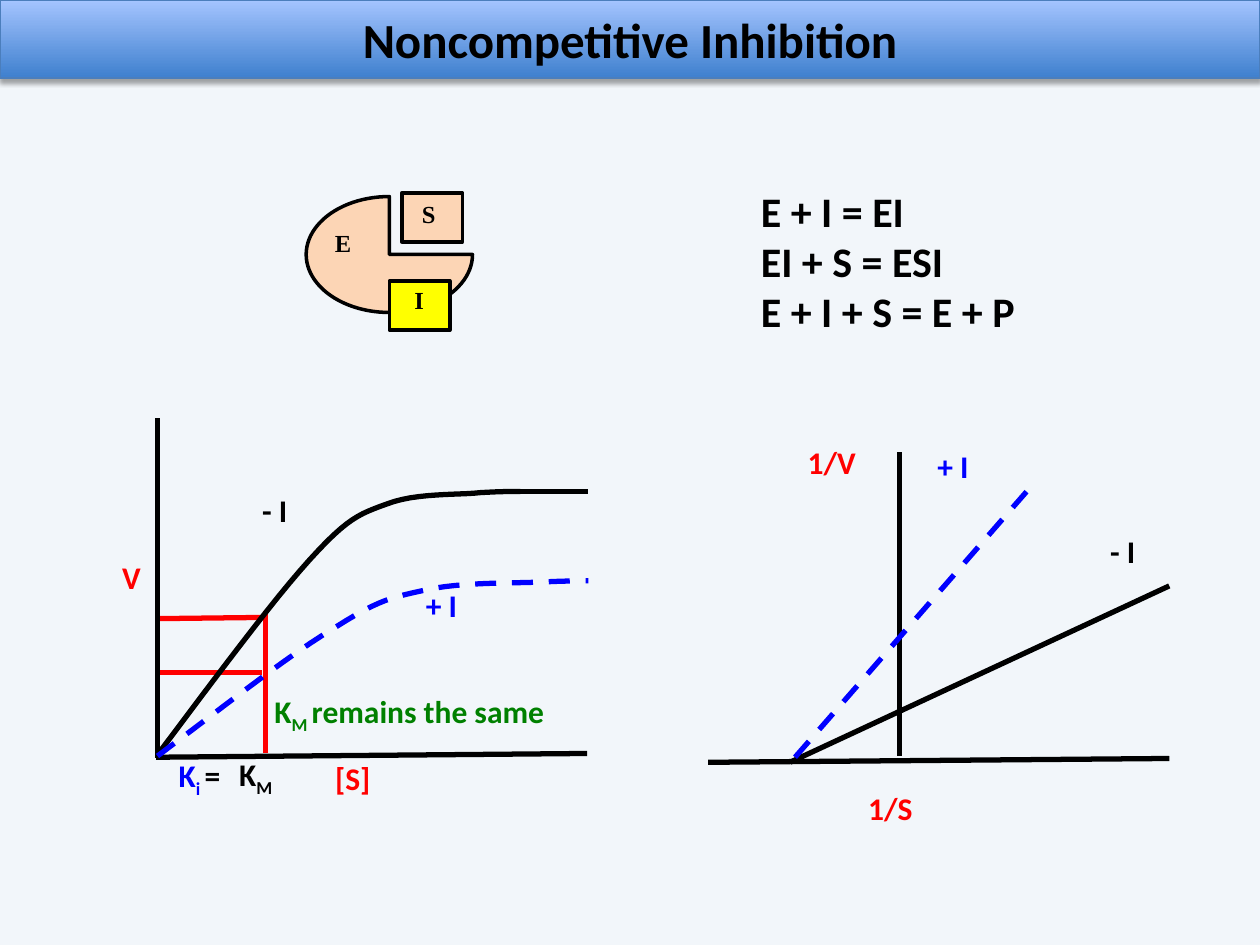
import lxml.etree
import pptx
import pptx.dml.color
import pptx.enum.dml
import pptx.enum.shapes
import pptx.enum.text
import pptx.oxml.ns
import pptx.util

WIDTH, HEIGHT = 10, 7.5
COLUMNS, ROWS = 100, 75
COLORS = {
    "background": "F2F6FA", "black": "000000", "red": "FF0000", "blue": "0000FF",
    "green": "008000", "peach": "FCD5B5", "yellow": "FFFF00",
    "title top": "A4C4FF", "title bottom": "3F80CE", "title border": "4B7EBC",
}
SHAPES = pptx.enum.shapes.MSO_SHAPE
LABEL = {"size": pptx.util.Pt(18), "name": "Calibri", "bold": True}
EQUATION = {**LABEL, "size": pptx.util.Pt(24)}
TITLE = {**LABEL, "size": pptx.util.Pt(28)}
ENZYME = {**LABEL, "size": pptx.util.Pt(14), "name": "Times New Roman"}

LINES = [
    ((56.2, 60.5), (92.8, 60.2), "black", False),
    ((71.4, 35.9), (71.4, 60), "black", False),
    ((62.7, 60.5), (92.8, 46.5), "black", False),
    ((63.1, 60.1), (82.1, 38.3), "blue", True),
    ((21.1, 48.5), (21.1, 59.8), "red", False),
    ((12.4, 49.1), (21.1, 49), "red", False),
    ((12.5, 53.4), (20.8, 53.4), "red", False),
    ((12.5, 33.2), (12.5, 60.2), "black", False),
    ((12.4, 60.1), (46.6, 59.8), "black", False),
    ((39.5, 39), (46.7, 39), "black", False),
]
CURVES = [
    ("black", False, (12.5, 59.9), [
        ((17.1, 53.8), (21.6, 47.7), (24.6, 44.4)),
        ((27.6, 41.1), (28.5, 40.8), (30.7, 40)),
        ((33, 39.1), (36.4, 39.3), (38.1, 39.1)),
        ((39.9, 39), (40.6, 39), (41.3, 39))]),
    ("blue", True, (12.5, 60), [
        ((18, 55.9), (22.9, 52), (26.6, 49.8)),
        ((30.2, 47.5), (31.2, 47.4), (33.9, 46.8)),
        ((36.6, 46.2), (40.7, 46.3), (42.9, 46.2)),
        ((45, 46.1), (45.9, 46.1), (46.7, 46.1))]),
]
ENZYME_PARTS = [
    (SHAPES.PIE, (24.3, 15.6, 13.2, 9.2), "peach"),
    (SHAPES.RECTANGLE, (30.9, 22.3, 4.8, 3.9), "yellow"),
    (SHAPES.RECTANGLE, (31.9, 15.3, 4.8, 3.9), "peach"),
]
LABELS = [
    ((59.4, 14.2, 23, 13.1), EQUATION, None, True, [
        [("E + I = EI", "black", False)],
        [("EI + S = ESI", "black", False)],
        [("E + I + S = E + P", "black", False)]]),
    ((63.7, 34.8, 6.2, 5.4), LABEL, 0.04, False, [[("1/V", "red", False)]]),
    ((68.5, 62.2, 5.7, 5.4), LABEL, 0.04, False, [[("1/S", "red", False)]]),
    ((74, 35.1, 4.4, 5.5), LABEL, 0.04, False, [[("+ I", "blue", False)]]),
    ((87.7, 41.8, 3.8, 5.5), LABEL, 0.04, False, [[("- I", "black", False)]]),
    ((31.9, 22.1, 4, 5.3), ENZYME, None, False, [[("I", "black", False)]]),
    ((32.5, 15.3, 4.4, 5.3), ENZYME, None, False, [[("S", "black", False)]]),
    ((25.6, 17.6, 4.9, 5.3), ENZYME, None, False, [[("E", "black", False)]]),
    ((9.3, 43.9, 2.9, 5), LABEL, 0.04, False, [[("V", "red", False)]]),
    ((20.4, 38.6, 3.6, 5), LABEL, 0.04, False, [[("- I", "black", False)]]),
    ((33.4, 46.1, 4.2, 5), LABEL, 0.04, False, [[("+ I", "blue", False)]]),
    ((26.6, 60.2, 3.5, 3.9), LABEL, 0, False, [[("[S]", "red", False)]]),
    ((18, 59.4, 6, 5.2), LABEL, None, False,
     [[("K", "black", False), ("M", "black", True)]]),
    ((13.2, 59.5, 6.9, 5.2), LABEL, None, False,
     [[("K", "blue", False), ("i ", "blue", True), ("=", "black", False)]]),
    ((20.8, 54.4, 29.3, 5.2), LABEL, None, False,
     [[("K", "green", False), ("M ", "green", True), ("remains the same", "green", False)]]),
]


def color(name):
    return pptx.dml.color.RGBColor.from_string(COLORS[name])


def place(*lengths):
    units = (WIDTH / COLUMNS, HEIGHT / ROWS) * 2
    return [pptx.util.Inches(length * unit) for length, unit in zip(lengths, units)]


def apply(target, values):
    for name, value in values.items():
        setattr(target, name, value)


def style_line(line, name, points, dashed=False):
    line.color.rgb = color(name)
    line.width = pptx.util.Pt(points)
    if dashed:
        line.dash_style = pptx.enum.dml.MSO_LINE.DASH


def add_effects(shape):
    tag = pptx.oxml.ns.qn("a:effectLst")
    return lxml.etree.SubElement(shape._element.spPr, tag)


def add_line(slide, start, end, name, dashed):
    connector = slide.shapes.add_connector(
        pptx.enum.shapes.MSO_CONNECTOR.STRAIGHT, *place(*start, *end))
    style_line(connector.line, name, 3, dashed)
    add_effects(connector)


def bezier(points, share):
    rest = 1 - share
    weights = (rest ** 3, 3 * rest ** 2 * share, 3 * rest * share ** 2, share ** 3)
    return place(*(sum(w * p[axis] for w, p in zip(weights, points)) for axis in (0, 1)))


def add_curve(slide, name, dashed, start, segments, steps=12):
    builder = slide.shapes.build_freeform(*place(*start))
    for segment in segments:
        points = (start, *segment)
        builder.add_line_segments(
            [bezier(points, step / steps) for step in range(1, steps + 1)], close=False)
        start = segment[-1]
    shape = builder.convert_to_shape()
    shape.shadow.inherit = False
    shape.fill.background()
    style_line(shape.line, name, 3, dashed)


def add_part(slide, kind, box, fill):
    shape = slide.shapes.add_shape(kind, *place(*box))
    shape.shadow.inherit = False
    shape.fill.solid()
    shape.fill.fore_color.rgb = color(fill)
    style_line(shape.line, "black", 2)


def write(paragraph, runs, font):
    for text, name, subscript in runs:
        run = paragraph.add_run()
        run.text = text
        apply(run.font, font)
        run.font.color.rgb = color(name)
        if subscript:
            run.font._element.set("baseline", "-25000")


def add_label(slide, box, font, inset, wrap, paragraphs):
    frame = slide.shapes.add_textbox(*place(*box)).text_frame
    apply(frame, {"word_wrap": wrap,
                  "auto_size": pptx.enum.text.MSO_AUTO_SIZE.SHAPE_TO_FIT_TEXT})
    if inset is not None:
        apply(frame, {f"margin_{side}": pptx.util.Inches(inset)
                      for side in ("left", "top", "right", "bottom")})
    for index, runs in enumerate(paragraphs):
        paragraph = frame.add_paragraph() if index else frame.paragraphs[0]
        write(paragraph, runs, font)


def add_title(slide, text):
    shape = slide.shapes.add_shape(SHAPES.RECTANGLE, *place(0, 0, COLUMNS, 6.2))
    shape.fill.gradient()
    shape.fill.gradient_angle = 90
    for stop, name, position in zip(
            shape.fill.gradient_stops, ("title bottom", "title top"), (0, 1)):
        stop.color.rgb = color(name)
        stop.position = position
    style_line(shape.line, "title border", 0.75)
    qn = pptx.oxml.ns.qn
    shadow = lxml.etree.SubElement(
        add_effects(shape), qn("a:outerShdw"), blurRad=str(pptx.util.Pt(3.1)),
        dist=str(pptx.util.Pt(1.8)), dir="5400000", rotWithShape="0")
    tint = lxml.etree.SubElement(shadow, qn("a:srgbClr"), val=COLORS["black"])
    lxml.etree.SubElement(tint, qn("a:alpha"), val="35000")
    shape.text_frame.vertical_anchor = pptx.enum.text.MSO_ANCHOR.MIDDLE
    paragraph = shape.text_frame.paragraphs[0]
    paragraph.alignment = pptx.enum.text.PP_ALIGN.CENTER
    write(paragraph, [(text, "black", False)], TITLE)


def main():
    presentation = pptx.Presentation()
    apply(presentation, {"slide_width": pptx.util.Inches(WIDTH),
                         "slide_height": pptx.util.Inches(HEIGHT)})
    slide = presentation.slides.add_slide(presentation.slide_layouts[6])
    slide.background.fill.solid()
    slide.background.fill.fore_color.rgb = color("background")
    for add, rows in ((add_line, LINES), (add_curve, CURVES),
                      (add_part, ENZYME_PARTS), (add_label, LABELS)):
        for row in rows:
            add(slide, *row)
    add_title(slide, "Noncompetitive Inhibition")
    presentation.save("out.pptx")


if __name__ == "__main__":
    main()
